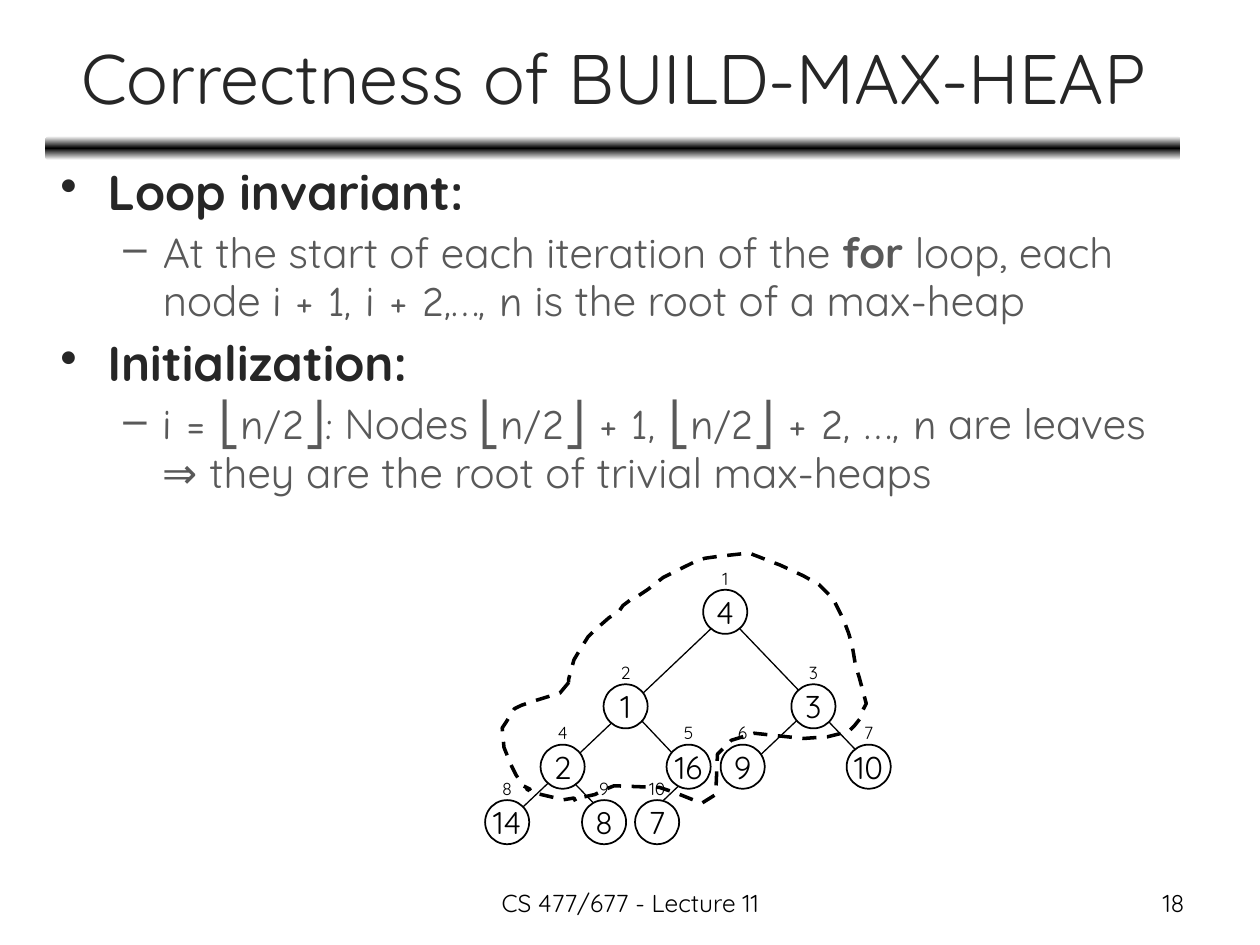
"""Build the slide on the correctness of BUILD-MAX-HEAP."""
from copy import deepcopy
from dataclasses import dataclass
from typing import NamedTuple

from lxml.etree import SubElement as Sub
from pptx import Presentation
from pptx.dml.color import RGBColor as RGB
from pptx.enum.dml import MSO_LINE as Dash
from pptx.enum.shapes import MSO_CONNECTOR as Link, MSO_SHAPE as Kind
from pptx.enum.text import MSO_ANCHOR as Anchor, PP_ALIGN as Align
from pptx.oxml.ns import qn
from pptx.util import Pt


@dataclass(frozen=True)
class Theme:
    black: RGB = RGB(0, 0, 0)
    white: RGB = RGB(255, 255, 255)
    dark: RGB = RGB(0x26, 0x26, 0x26)
    gray: RGB = RGB(0x59, 0x59, 0x59)
    font: str = "Quicksand"
    math: str = "Comic Neue"
    title: int = 40
    head: int = 28
    point: int = 24
    node: int = 18
    foot: int = 14
    label: int = 10


class Box(NamedTuple):
    left: float
    top: float
    width: float
    height: float


class Node(NamedTuple):
    value: str
    index: str
    left: float
    top: float


class Edge(NamedTuple):
    x1: float
    y1: float
    x2: float
    y2: float


class Part(NamedTuple):
    text: str
    font: str
    bold: bool = False


class Level(NamedTuple):
    mark: str
    left: float
    hang: float
    size: int
    color: RGB


class Item(NamedTuple):
    level: Level
    parts: list[Part]


LOOK = Theme()
SIZE = 25.2
HEAD = Level("•", 27, 27, LOOK.head, LOOK.dark)
POINT = Level("–", 58.5, 22.5, LOOK.point, LOOK.gray)

BODY = [
    Item(HEAD, [Part("Loop invariant:", LOOK.font, True)]),
    Item(POINT, [
        Part("At the start of each iteration of the ", LOOK.font),
        Part("for", LOOK.font, True),
        Part(" loop, each node ", LOOK.font),
        Part("i + 1, i + 2,…, n", LOOK.math),
        Part(" is the root of a max-heap", LOOK.font),
    ]),
    Item(HEAD, [Part("Initialization:", LOOK.font, True)]),
    Item(POINT, [
        Part("i = ⎣n/2⎦:", LOOK.math),
        Part(" Nodes ", LOOK.font),
        Part("⎣n/2⎦ + 1, ⎣n/2⎦ + 2, …, n", LOOK.math),
        Part(" are leaves ⇒ they are the root of trivial max-heaps", LOOK.font),
    ]),
]

ROWS = (337, 391, 425.5, 457.2)
NODES = [
    Node("4", "1", 401.8, ROWS[0]),
    Node("1", "2", 344.9, ROWS[1]),
    Node("3", "3", 452.2, ROWS[1]),
    Node("2", "4", 308.9, ROWS[2]),
    Node("16", "5", 380.9, ROWS[2]),
    Node("9", "6", 411.8, ROWS[2]),
    Node("10", "7", 483.8, ROWS[2]),
    Node("14", "8", 277.2, ROWS[3]),
    Node("8", "9", 332.6, ROWS[3]),
    Node("7", "10", 362.9, ROWS[3]),
]

EDGES = [
    Edge(366.5, 469.4, 398.9, 438.5),
    Edge(424.8, 440.6, 465.1, 402.5),
    Edge(352.1, 472.3, 313.2, 432),
    Edge(394.6, 441.4, 356.4, 401),
    Edge(503.3, 443.5, 406.8, 342.7),
    Edge(290.9, 468.7, 416.9, 349.2),
]

LOOP = [
    (325, 390), (320, 396), (307, 400), (298, 403), (294, 405), (289, 413),
    (287, 416), (288, 427), (292, 437), (295, 443), (299, 449), (303, 451),
    (301, 451), (305, 453), (322, 457), (328, 456), (329, 458), (331, 456),
    (340, 454), (346, 451), (351, 449), (377, 450), (386, 453), (401, 459),
    (409, 454), (410, 431), (411, 430), (418, 423), (431, 419), (459, 422),
    (473, 421), (485, 418), (488, 415), (492, 410), (493, 406), (495, 402),
    (491, 387), (489, 381), (488, 375), (487, 369), (485, 362), (482, 354),
    (477, 344), (474, 340), (468, 334), (459, 329), (446, 323), (428, 316),
    (410, 318), (403, 319), (399, 320), (389, 325), (379, 330), (370, 337),
    (364, 341), (360, 343), (356, 346), (354, 349), (348, 353), (340, 360),
    (336, 364), (331, 372), (328, 377), (325, 388),
]


def place(box: Box) -> list[Pt]:
    return [Pt(side) for side in box]


def style(run, font: str, size: int, color: RGB, bold: bool = False) -> None:
    run.font.name, run.font.size, run.font.bold = font, Pt(size), bold
    run.font.color.rgb = color


def write(shape, text: str, size: int, color: RGB, align: Align, wrap: bool = True) -> None:
    frame = shape.text_frame
    frame.text, frame.word_wrap = text, wrap
    line = frame.paragraphs[0]
    line.alignment = align
    style(line.runs[0], LOOK.font, size, color)


def add_text(slide, box: Box, text: str, size: int, color: RGB, align: Align, wrap: bool = True):
    shape = slide.shapes.add_textbox(*place(box))
    write(shape, text, size, color, align, wrap)
    return shape


def add_bar(slide, box: Box) -> None:
    bar = slide.shapes.add_shape(Kind.ROUNDED_RECTANGLE, *place(box))
    bar.shadow.inherit = False
    bar.line.fill.background()
    bar.fill.gradient()
    bar.fill.gradient_angle = 90
    stops = bar.fill.gradient_stops
    for stop, color, spot in zip(stops, (LOOK.white, LOOK.black), (0, 0.5)):
        stop.color.rgb, stop.position = color, spot
    group = bar.element.spPr.find(".//" + qn("a:gsLst"))
    last = deepcopy(group[0])
    last.set("pos", "100000")
    group.append(last)


def add_body(slide, box: Box, items: list[Item]) -> None:
    frame = slide.shapes.add_textbox(*place(box)).text_frame
    frame.word_wrap = True
    for num, (level, parts) in enumerate(items):
        line = frame.add_paragraph() if num else frame.paragraphs[0]
        line.line_spacing = 0.96
        line.space_before = Pt(level.size * 0.2 if num else 0)
        props = line._p.get_or_add_pPr()
        props.set("marL", str(Pt(level.left)))
        props.set("indent", str(-Pt(level.hang)))
        Sub(props, qn("a:buChar")).set("char", level.mark)
        for part in parts:
            run = line.add_run()
            run.text = part.text
            style(run, part.font, level.size, level.color, part.bold)


def add_edge(slide, edge: Edge) -> None:
    line = slide.shapes.add_connector(Link.STRAIGHT, *[Pt(end) for end in edge])
    line.line.color.rgb, line.line.width = LOOK.black, Pt(0.75)
    Sub(line.element.spPr, qn("a:effectLst"))


def add_node(slide, node: Node) -> None:
    disc = slide.shapes.add_shape(Kind.OVAL, *place(Box(node.left, node.top, SIZE, SIZE)))
    disc.shadow.inherit = False
    disc.fill.solid()
    disc.fill.fore_color.rgb = LOOK.white
    disc.line.color.rgb, disc.line.width = LOOK.black, Pt(1)
    write(disc, node.value, LOOK.node, LOOK.black, Align.CENTER, False)
    disc.text_frame.vertical_anchor = Anchor.MIDDLE


def add_label(slide, node: Node) -> None:
    width = 14.4 + 5.6 * len(node.index)
    box = Box(node.left + (SIZE - width) / 2, node.top - 16.2, width, 19.4)
    add_text(slide, box, node.index, LOOK.label, LOOK.black, Align.CENTER, False)


def add_loop(slide, spots: list[tuple[int, int]]) -> None:
    pen = slide.shapes.build_freeform(*spots[0], scale=Pt(1))
    pen.add_line_segments(spots[1:], close=True)
    loop = pen.convert_to_shape()
    loop.shadow.inherit = False
    loop.fill.background()
    loop.line.color.rgb, loop.line.width = LOOK.black, Pt(2)
    loop.line.dash_style = Dash.DASH


def main() -> None:
    deck = Presentation()
    deck.slide_width, deck.slide_height = Pt(720), Pt(540)
    slide = deck.slides.add_slide(deck.slide_layouts[6])
    add_bar(slide, Box(25.9, 77.8, 648.7, 13.7))
    add_text(slide, Box(246.2, 504, 228.2, 25.2), "CS 477/677 - Lecture 11",
             LOOK.foot, LOOK.black, Align.CENTER)
    title = add_text(slide, Box(26.6, 7.9, 648, 71.3), "Correctness of BUILD-MAX-HEAP",
                     LOOK.title, LOOK.dark, Align.CENTER)
    title.text_frame.vertical_anchor = Anchor.MIDDLE
    add_body(slide, Box(27.4, 90.7, 654.5, 223.9), BODY)
    for draw, items in ((add_edge, EDGES), (add_node, NODES), (add_label, NODES)):
        for item in items:
            draw(slide, item)
    add_loop(slide, LOOP)
    add_text(slide, Box(516.2, 504, 167.8, 25.2), "18", LOOK.foot, LOOK.black, Align.RIGHT)
    deck.save("out.pptx")


if __name__ == "__main__":
    main()
